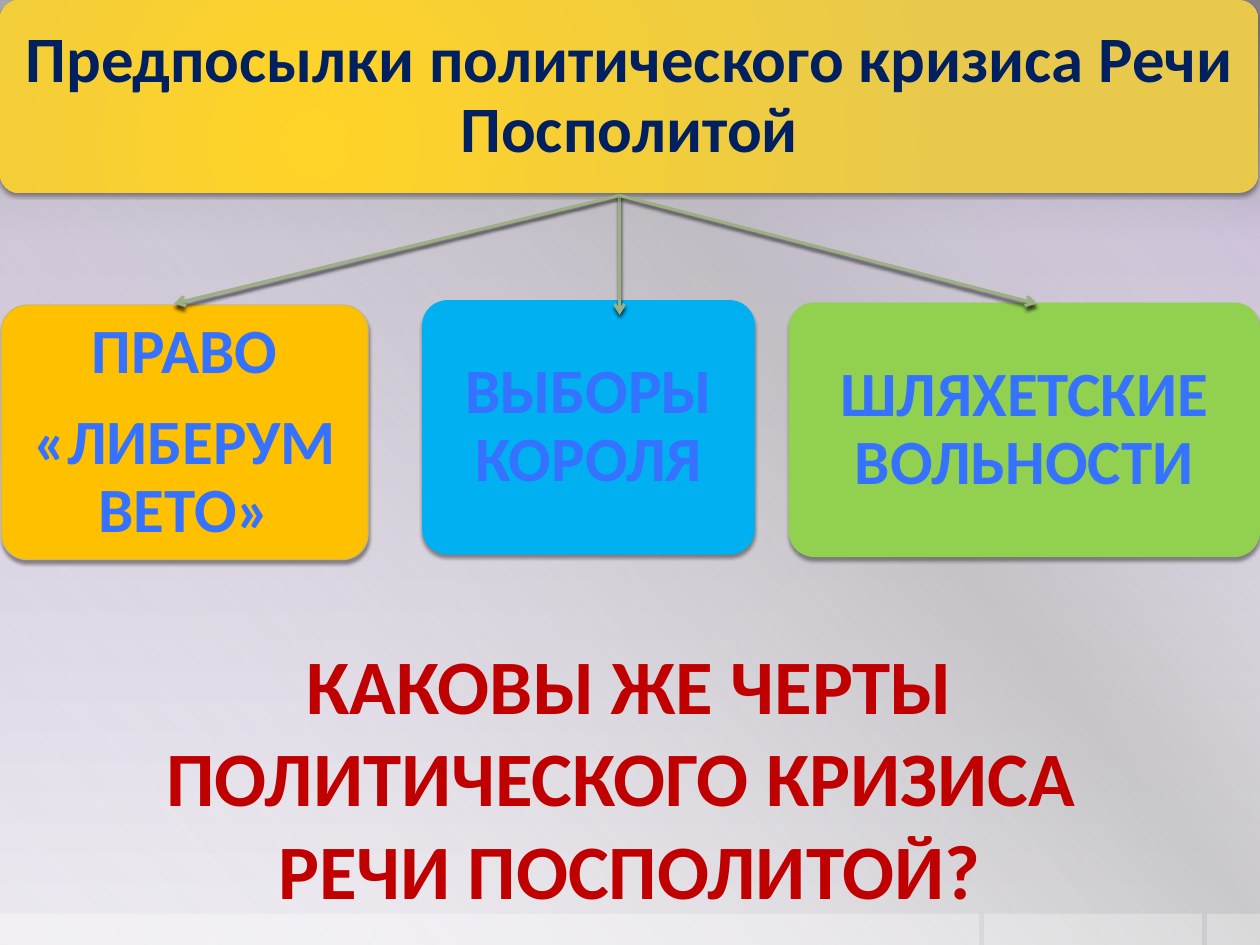
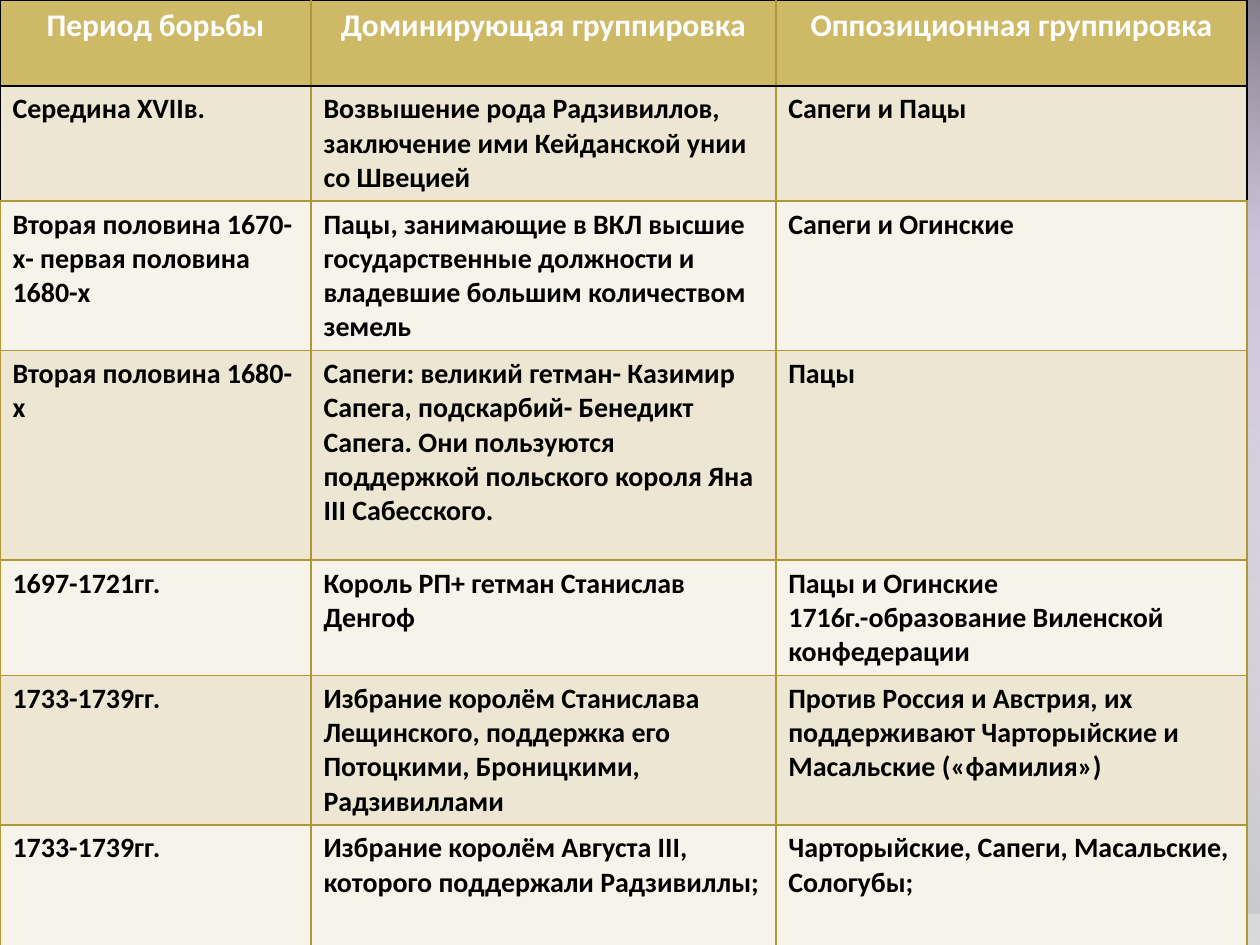
from pptx import Presentation
from pptx.dml.color import RGBColor
from pptx.enum.shapes import MSO_CONNECTOR as LINE, MSO_SHAPE as SHAPE
from pptx.enum.text import MSO_ANCHOR as ANCHOR, PP_ALIGN as ALIGN
from pptx.oxml import parse_xml
from pptx.oxml.ns import nsdecls, qn
from pptx.util import Cm, Pt

FONT = "Calibri"
WHITE = RGBColor(0xFF, 0xFF, 0xFF)
BLACK = RGBColor(0, 0, 0)
GREY = RGBColor(0xBF, 0xBF, 0xBF)
SLATE = RGBColor(0x82, 0x7C, 0x89)
LILAC = RGBColor(0xC8, 0xBB, 0xD6)
MIST = RGBColor(0xEC, 0xE9, 0xF0)
NAVY = RGBColor(0x00, 0x20, 0x60)
BLUE = RGBColor(0x35, 0x72, 0xFF)
RED = RGBColor(0xC0, 0, 0)
YELLOW = RGBColor(0xFF, 0xD3, 0x27)
HONEY = RGBColor(0xE8, 0xC9, 0x4C)
AMBER = RGBColor(0xFF, 0xC0, 0)
SKY = RGBColor(0, 0xB0, 0xF0)
LIME = RGBColor(0x92, 0xD0, 0x50)
SAGE = RGBColor(0x9C, 0xB0, 0x84)
GOLD = RGBColor(0xCE, 0xB9, 0x66)
BRONZE = RGBColor(0xAF, 0x97, 0x38)
SAND = RGBColor(0xED, 0xE6, 0xD3)
CREAM = RGBColor(0xF6, 0xF3, 0xEA)

WIDE, HIGH = 25.4, 19.05
LINEAR = '<a:lin ang="{}" scaled="0"/>'
ROUND = ('<a:path path="circle"><a:fillToRect l="50000" t="100000" '
         'r="100000" b="50000"/></a:path>')

CAUSES = [
    ("ВЫБОРЫ КОРОЛЯ", (8.51, 6.05, 6.71, 5.13), SKY, None),
    ("ПРАВО\n«ЛИБЕРУМ ВЕТО»", (0.03, 6.15, 7.39, 5.13), AMBER, GOLD),
    ("ШЛЯХЕТСКИЕ ВОЛЬНОСТИ", (15.9, 6.1, 9.5, 5.13), LIME, None),
]
HUB = (12.49, 3.94)
TIPS = [(3.51, 6.12), (12.49, 6.35), (20.9, 6.12)]

COLS = [6.27, 9.37, 9.5]
ROWS = [1.73, 2.24, 2.9, 4.22, 2.24, 2.9, 2.9]
GROUPS = [
    ("Период борьбы", "Доминирующая группировка", "Оппозиционная группировка"),
    ("Середина XVIIв.",
     "Возвышение рода Радзивиллов, заключение ими Кейданской унии со Швецией",
     "Сапеги и Пацы"),
    ("Вторая половина 1670-х- первая половина 1680-х",
     "Пацы, занимающие в ВКЛ высшие государственные должности и владевшие "
     "большим количеством земель",
     "Сапеги и Огинские"),
    ("Вторая половина 1680-х",
     "Сапеги: великий гетман- Казимир Сапега, подскарбий- Бенедикт Сапега. "
     "Они пользуются поддержкой польского короля Яна III Сабесского.",
     "Пацы"),
    ("1697-1721гг.", "Король РП+ гетман Станислав Денгоф",
     "Пацы и Огинские\n1716г.-образование Виленской конфедерации"),
    ("1733-1739гг.",
     "Избрание королём Станислава Лещинского, поддержка его Потоцкими, "
     "Броницкими, Радзивиллами",
     "Против Россия и Австрия, их поддерживают Чарторыйские и Масальские "
     "(«фамилия»)"),
    ("1733-1739гг.",
     "Избрание королём Августа III, которого поддержали Радзивиллы;",
     "Чарторыйские, Сапеги, Масальские, Сологубы;"),
]


def tint(color, alpha=100):
    return (f'<a:srgbClr val="{color}"><a:alpha val="{alpha * 1000}"/>'
            '</a:srgbClr>')


def blend(holder, stops, way):
    """Replace the solid fill in holder by a gradient of (place, colour, alpha)."""
    marks = "".join(f'<a:gs pos="{place * 1000}">{tint(*hue)}</a:gs>'
                    for place, *hue in stops)
    grad = parse_xml(f'<a:gradFill {nsdecls("a")} rotWithShape="1">'
                     f'<a:gsLst>{marks}</a:gsLst>{way}</a:gradFill>')
    holder.replace(holder.find(qn("a:solidFill")), grad)


def shade(item, alpha):
    """Give a shape or connector a soft shadow straight below it."""
    props = item.element.spPr
    for old in props.findall(qn("a:effectLst")):
        props.remove(old)
    props.append(parse_xml(
        f'<a:effectLst {nsdecls("a")}><a:outerShdw blurRad="25400" '
        f'dist="25400" dir="5400000" rotWithShape="0">{tint(BLACK, alpha)}'
        '</a:outerShdw></a:effectLst>'))


def add_form(slide, kind, place, color):
    form = slide.shapes.add_shape(kind, *map(Cm, place))
    form.shadow.inherit = False
    form.fill.solid()
    form.fill.fore_color.rgb = color
    form.line.fill.background()
    return form


def write(frame, text, size, color, align=ALIGN.CENTER):
    frame.text = text
    frame.word_wrap = True
    for para in frame.paragraphs:
        para.alignment = align
        for run in para.runs:
            font = run.font
            font.name, font.size, font.bold = FONT, Pt(size), True
            font.color.rgb = color


def add_box(slide, text, place, fill, size, color, edge=None):
    box = add_form(slide, SHAPE.ROUNDED_RECTANGLE, place, fill)
    box.adjustments[0] = 0.1
    if edge:
        box.line.color.rgb = edge
        box.line.width = Pt(0.75)
    shade(box, 40)
    frame = box.text_frame
    write(frame, text, size, color)
    frame.vertical_anchor = ANCHOR.MIDDLE
    frame.margin_left = frame.margin_right = Cm(0.37)
    frame.margin_top = frame.margin_bottom = Cm(0.37)
    for para in frame.paragraphs:
        para.line_spacing = 0.9
    for para in frame.paragraphs[:-1]:
        para.space_after = Pt(13)
    return box


def add_arrow(slide, start, end):
    arrow = slide.shapes.add_connector(LINE.STRAIGHT, *map(Cm, start + end))
    arrow.line.color.rgb = SAGE
    arrow.line.width = Pt(1.75)
    arrow.line._get_or_add_ln().append(
        parse_xml(f'<a:tailEnd {nsdecls("a")} type="arrow"/>'))
    shade(arrow, 70)


def add_page(deck):
    """Add a blank slide with the shared backdrop and bottom bands."""
    slide = deck.slides.add_slide(deck.slide_layouts[6])
    slide.background.fill.solid()
    blend(slide.element.find(".//" + qn("p:bgPr")),
          [(0, SLATE), (26, LILAC), (100, MIST)], LINEAR.format(90 * 60000))
    glow = add_form(slide, SHAPE.RECTANGLE, (0, 0, WIDE, HIGH), WHITE)
    blend(glow.element.spPr,
          [(0, WHITE, 0), (34, GREY, 61), (38, GREY, 76), (100, WHITE, 0)],
          LINEAR.format(140 * 60000))
    for left, width in [(24.33, 1.07), (19.84, 4.39), (0, 19.74)]:
        band = add_form(slide, SHAPE.RECTANGLE, (left, 18.42, width, 0.63), WHITE)
        blend(band.element.spPr, [(0, WHITE, 30), (100, WHITE, 30)],
              LINEAR.format(0))
    return slide


def rule_cell(cell, row, col):
    """Draw bronze borders, black around the header and the first row's sides."""
    dark = {
        "L": row < 2 and col == 0,
        "R": row < 2 and col == len(COLS) - 1,
        "T": row < 2,
        "B": row == 0,
    }
    props = cell._tc.get_or_add_tcPr()
    for spot, (side, black) in enumerate(dark.items()):
        color = BLACK if black else BRONZE
        props.insert(spot, parse_xml(
            f'<a:ln{side} {nsdecls("a")} w="12700"><a:solidFill>{tint(color)}'
            f'</a:solidFill></a:ln{side}>'))


def add_grid(slide):
    grid = slide.shapes.add_table(len(ROWS), len(COLS), 0, 0,
                                  Cm(sum(COLS)), Cm(sum(ROWS))).table
    for col, width in zip(grid.columns, COLS):
        col.width = Cm(width)
    for r, (height, texts) in enumerate(zip(ROWS, GROUPS)):
        grid.rows[r].height = Cm(height)
        for c, text in enumerate(texts):
            cell = grid.cell(r, c)
            cell.fill.solid()
            if r == 0:
                cell.fill.fore_color.rgb = GOLD
                write(cell.text_frame, text, 18, WHITE)
            else:
                cell.fill.fore_color.rgb = SAND if r % 2 else CREAM
                write(cell.text_frame, text, 16, BLACK, ALIGN.LEFT)
            rule_cell(cell, r, c)


def draw_causes(slide):
    title = add_box(slide, "Предпосылки политического кризиса Речи Посполитой",
                    (0, 0, 25.37, 3.89), YELLOW, 37, NAVY)
    blend(title.element.spPr, [(0, YELLOW), (100, HONEY)], ROUND)
    for text, place, fill, edge in CAUSES:
        add_box(slide, text, place, fill, 36, BLUE, edge)
    for tip in TIPS:
        add_arrow(slide, HUB, tip)
    query = slide.shapes.add_textbox(*map(Cm, (0, 12.73, WIDE, 5.89)))
    write(query.text_frame,
          "КАКОВЫ ЖЕ ЧЕРТЫ ПОЛИТИЧЕСКОГО КРИЗИСА \nРЕЧИ ПОСПОЛИТОЙ?", 44, RED)


def main():
    deck = Presentation()
    deck.slide_width, deck.slide_height = Cm(WIDE), Cm(HIGH)
    draw_causes(add_page(deck))
    add_grid(add_page(deck))
    deck.save("out.pptx")


if __name__ == "__main__":
    main()
